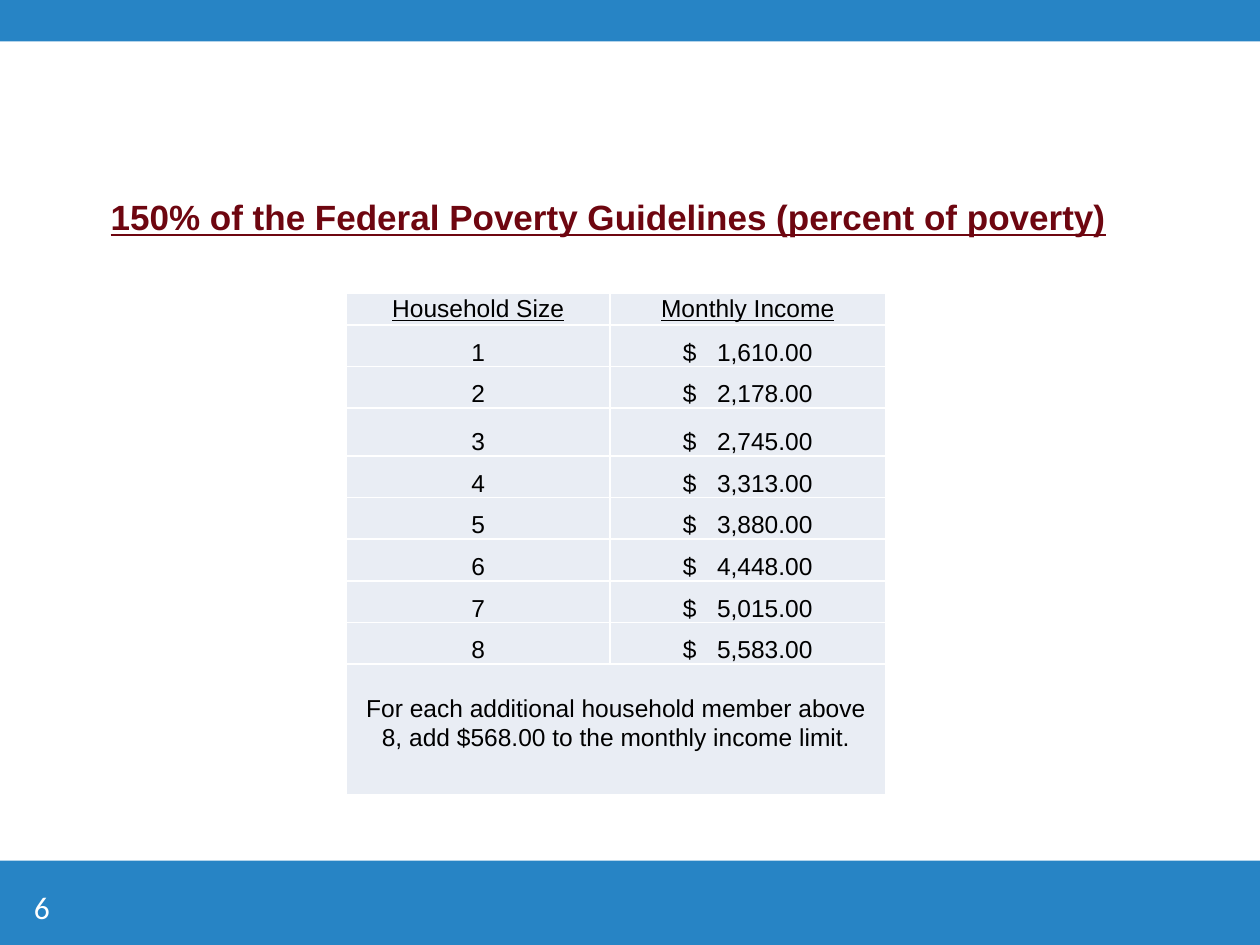
from dataclasses import dataclass

from lxml.etree import SubElement
from pptx import Presentation
from pptx.dml.color import RGBColor
from pptx.enum.shapes import MSO_SHAPE
from pptx.enum.text import MSO_ANCHOR, PP_ALIGN
from pptx.oxml.ns import qn
from pptx.util import Inches, Pt


@dataclass(frozen=True)
class Theme:
    blue: str = "2784C5"
    maroon: str = "6E0610"
    cell: str = "E9EDF4"
    white: str = "FFFFFF"
    black: str = "000000"
    font: str = "Arial"
    number_font: str = "Calibri"
    title_size: int = 20
    number_size: int = 18
    table_size: int = 14


THEME = Theme()
INCOMES = ["1,610.00", "2,178.00", "2,745.00", "3,313.00",
           "3,880.00", "4,448.00", "5,015.00", "5,583.00"]
COLUMN_WIDTHS = [2.09, 2.19]
ROW_HEIGHTS = [0.25, 0.33, 0.33, 0.38] + [0.33] * 5 + [1.04]


def write_text(tf, text, size=THEME.table_size, color=THEME.black,
               font=THEME.font, bold=False, underline=False,
               align=PP_ALIGN.CENTER, spacing=None, right_tab=None):
    p = tf.paragraphs[0]
    p.alignment = align
    if spacing:
        p.line_spacing = spacing
    if right_tab:
        tabs = SubElement(p._p.get_or_add_pPr(), qn("a:tabLst"))
        SubElement(tabs, qn("a:tab"), pos=str(Inches(right_tab)), algn="r")
    r = p.add_run()
    r.text = text
    r.font.size = Pt(size)
    r.font.name = font
    r.font.bold = bold
    r.font.underline = underline
    r.font.color.rgb = RGBColor.from_string(color)


def add_band(s, top, height):
    sp = s.shapes.add_shape(MSO_SHAPE.RECTANGLE, 0, Inches(top),
                            Inches(10), Inches(height))
    sp.shadow.inherit = False
    sp.fill.solid()
    sp.fill.fore_color.rgb = RGBColor.from_string(THEME.blue)
    sp.line.fill.background()


def add_label(s, left, top, width, height, text, wrap=True, **style):
    sp = s.shapes.add_textbox(Inches(left), Inches(top),
                              Inches(width), Inches(height))
    tf = sp.text_frame
    tf.word_wrap = wrap
    tf.vertical_anchor = MSO_ANCHOR.MIDDLE
    write_text(tf, text, **style)


def add_borders(cell):
    tc_pr = cell._tc.get_or_add_tcPr()
    for side in ("lnL", "lnR", "lnT", "lnB"):
        line = SubElement(tc_pr, qn(f"a:{side}"), w=str(Pt(1)))
        fill = SubElement(line, qn("a:solidFill"))
        SubElement(fill, qn("a:srgbClr"), val=THEME.white)


def fill_cell(cell, text, anchor=MSO_ANCHOR.BOTTOM, left=0.06, top=0, **style):
    cell.margin_left, cell.margin_right = Inches(left), Inches(0.06)
    cell.margin_top, cell.margin_bottom = Inches(top), 0
    cell.vertical_anchor = anchor
    write_text(cell.text_frame, text, spacing=1.07, **style)


def add_income_table(s):
    table = s.shapes.add_table(len(ROW_HEIGHTS), len(COLUMN_WIDTHS),
                               Inches(2.75), Inches(2.33),
                               Inches(sum(COLUMN_WIDTHS)),
                               Inches(sum(ROW_HEIGHTS))).table
    table.first_row = table.horz_banding = False
    for column, width in zip(table.columns, COLUMN_WIDTHS):
        column.width = Inches(width)
    for row, height in zip(table.rows, ROW_HEIGHTS):
        row.height = Inches(height)
    for cell in table.iter_cells():
        add_borders(cell)
        cell.fill.solid()
        cell.fill.fore_color.rgb = RGBColor.from_string(THEME.cell)

    for column, heading in enumerate(["Household Size", "Monthly Income"]):
        fill_cell(table.cell(0, column), heading, MSO_ANCHOR.TOP, underline=True)
    for size, income in enumerate(INCOMES, start=1):
        fill_cell(table.cell(size, 0), str(size))
        fill_cell(table.cell(size, 1), f"$\t{income}", left=0.58,
                  align=PP_ALIGN.LEFT, right_tab=1.03)

    last = len(ROW_HEIGHTS) - 1
    note = table.cell(last, 0)
    note.merge(table.cell(last, 1))
    fill_cell(note, "For each additional household member above 8, "
              "add $568.00 to the monthly income limit.",
              MSO_ANCHOR.TOP, top=0.23)


def main():
    prs = Presentation()
    prs.slide_width, prs.slide_height = Inches(10), Inches(7.5)
    s = prs.slides.add_slide(prs.slide_layouts[6])
    add_band(s, 0, 0.33)
    add_band(s, 6.83, 0.67)
    add_label(s, 0.17, 7, 2.33, 0.4, "6", size=THEME.number_size,
              color=THEME.white, font=THEME.number_font, align=PP_ALIGN.LEFT)
    add_income_table(s)
    add_label(s, 0.75, 1.5, 8.16, 0.44,
              "150% of the Federal Poverty Guidelines (percent of poverty)",
              wrap=False, size=THEME.title_size, color=THEME.maroon,
              bold=True, underline=True)
    prs.save("out.pptx")


if __name__ == "__main__":
    main()
